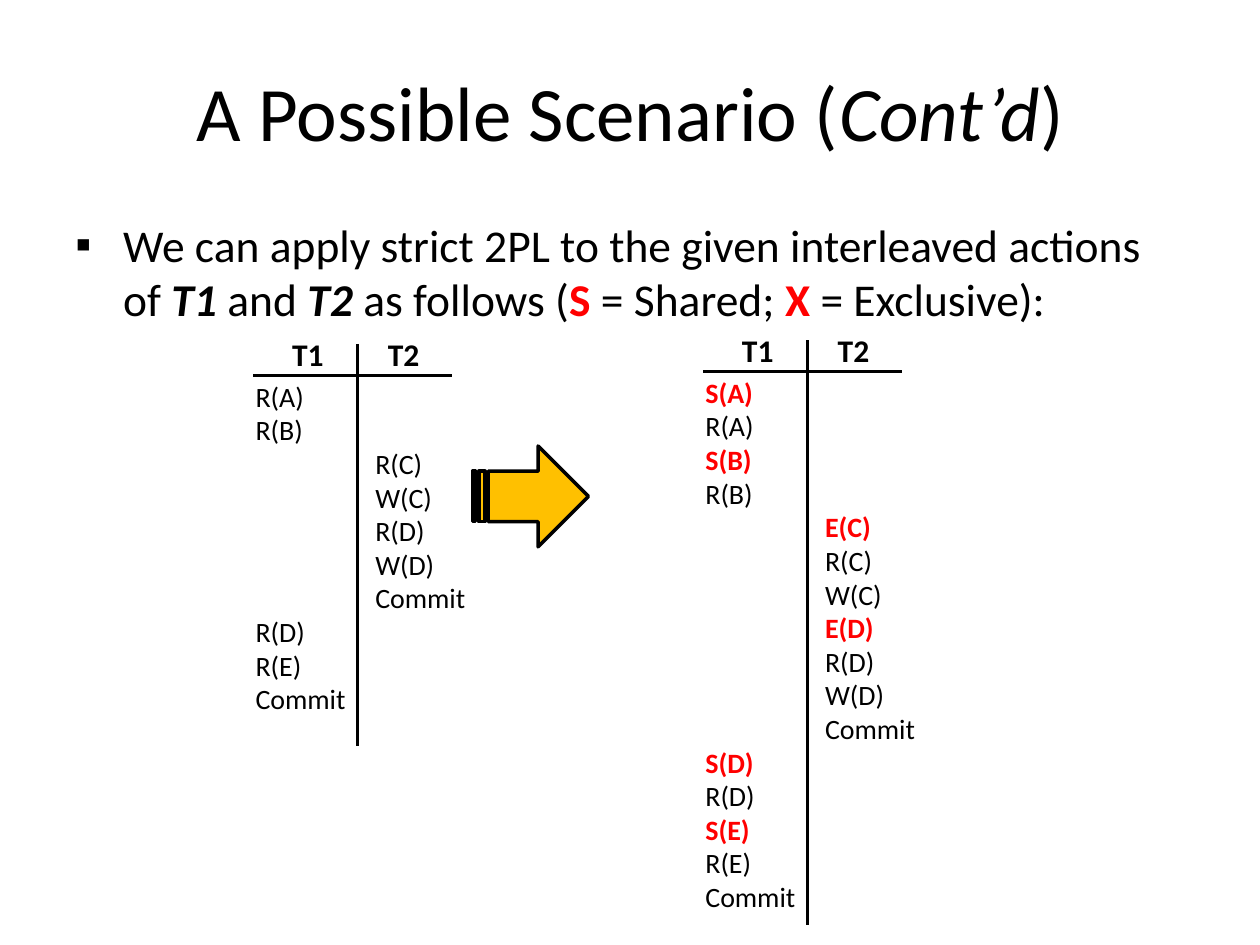
from pptx import Presentation, util as u
from pptx.dml.color import RGBColor as Rgb
from pptx.enum import shapes, text
from pptx.oxml.ns import qn
from lxml import etree


class Theme:
    font = "Calibri"
    ink, red, gold = (Rgb.from_string(c) for c in ("000000", "FF0000", "FFC000"))
    head, body, name, step = 44, 26, 18, 16
    rule, edge = 1.5, 2


# Content: a run is (words, marks), with b = bold, i = italic, r = red
title = [("A Possible Scenario (", ""), ("Cont’d", "i"), (")", "")]
point = [
    ("We can apply strict 2PL to the given interleaved actions of ", ""),
    ("T1", "bi"), (" and ", ""), ("T2", "bi"), (" as follows (", ""),
    ("S", "br"), (" = Shared; ", ""), ("X", "br"), (" = Exclusive):", ""),
]
# Each schedule: left, top, rule length, then per transaction (first row, steps)
plans = [
    (1.93, 2.61, 3.19, {
        "T1": [(0, "R(A) R(B)"), (7, "R(D) R(E) Commit")],
        "T2": [(2, "R(C) W(C) R(D) W(D) Commit")],
    }),
    (5.5, 2.58, 4.64, {
        "T1": [(0, "S(A) R(A) S(B) R(B)"), (11, "S(D) R(D) S(E) R(E) Commit")],
        "T2": [(4, "E(C) R(C) W(C) E(D) R(D) W(D) Commit")],
    }),
]
# Grid of a schedule, in inches from its left and top
ROW, PAD, COL = 0.267, 0.05, 0.95
NAME, STEPS, RULE = 0.29, 0.35, 0.37
SPLIT, WIDE = 0.91, 1.58

prs = Presentation()
prs.slide_width, prs.slide_height = u.Inches(10), u.Inches(7.5)
slide = prs.slides.add_slide(prs.slide_layouts[5])


def place(*box):
    return [u.Inches(v) for v in box]


def write(frame, paras, size, align=text.PP_ALIGN.LEFT, wrap=True, gaps=None):
    """Fill a frame with paragraphs of runs; gaps maps paragraph to points before."""
    frame.word_wrap = wrap
    if not wrap:
        frame.auto_size = text.MSO_AUTO_SIZE.SHAPE_TO_FIT_TEXT
    for n, runs in enumerate(paras):
        para = frame.paragraphs[0] if n == 0 else frame.add_paragraph()
        para.alignment = align
        if gaps and n in gaps:
            para.space_before = u.Pt(gaps[n])
        for words, marks in runs:
            run = para.add_run()
            run.text = words
            font = run.font
            font.name, font.size = Theme.font, u.Pt(size)
            font.bold, font.italic = "b" in marks, "i" in marks
            font.color.rgb = Theme.red if "r" in marks else Theme.ink
    return frame


def label(box, paras, size, **fmt):
    return write(slide.shapes.add_textbox(*place(*box)).text_frame, paras, size, **fmt)


def line(*ends):
    rule = slide.shapes.add_connector(shapes.MSO_CONNECTOR.STRAIGHT, *place(*ends))
    rule.line.color.rgb, rule.line.width = Theme.ink, u.Pt(Theme.rule)
    etree.SubElement(rule._element.spPr, qn("a:effectLst"))


def column(left, top, blocks):
    """Write one transaction's steps, leaving its idle rows free."""
    paras, gaps = [], {}
    first = row = blocks[0][0]
    for start, steps in blocks:
        if start > row:
            gaps[len(paras)] = (start - row) * ROW * 72
        ops = steps.split()
        paras += [[(op, "br" if op[0] in "SE" else "")] for op in ops]
        row = start + len(ops)
    box = left, top + first * ROW, 0.92, (row - first) * ROW + 2 * PAD
    label(box, paras, Theme.step, wrap=False, gaps=gaps)


# Title
head = slide.shapes.title
head.left, head.top, head.width, head.height = place(0.5, 0.25, 9, 1.25)
write(head.text_frame, [title], Theme.head, align=text.PP_ALIGN.CENTER)
head.text_frame.vertical_anchor = text.MSO_ANCHOR.MIDDLE

# Bullet
body = label((0.5, 1.67, 9, 1), [point], Theme.body)
props = body.paragraphs[0]._p.get_or_add_pPr()
props.set("marL", str(u.Inches(0.38)))
props.set("indent", str(-u.Inches(0.38)))
etree.SubElement(props, qn("a:buFont")).set("typeface", "Arial")
etree.SubElement(props, qn("a:buChar")).set("char", "▪")

# Schedules
for left, top, tall, parts in plans:
    mid, bar = left + SPLIT, top + RULE
    line(mid, top + 0.12, mid, top + 0.12 + tall)
    line(left + 0.08, bar, left + 0.08 + WIDE, bar)
    for n, (name, blocks) in enumerate(parts.items()):
        box = left + NAME + n * 0.76, top, 0.45, 0.4
        label(box, [[(name, "b")]], Theme.name, wrap=False)
        column(left + n * COL, top + STEPS, blocks)

# Arrow between the schedules
arrow = slide.shapes.add_shape(
    shapes.MSO_SHAPE.STRIPED_RIGHT_ARROW, *place(3.75, 3.54, 0.92, 0.8))
arrow.shadow.inherit = False
arrow.fill.solid()
arrow.fill.fore_color.rgb = Theme.gold
arrow.line.color.rgb, arrow.line.width = Theme.ink, u.Pt(Theme.edge)

prs.save("out.pptx")
